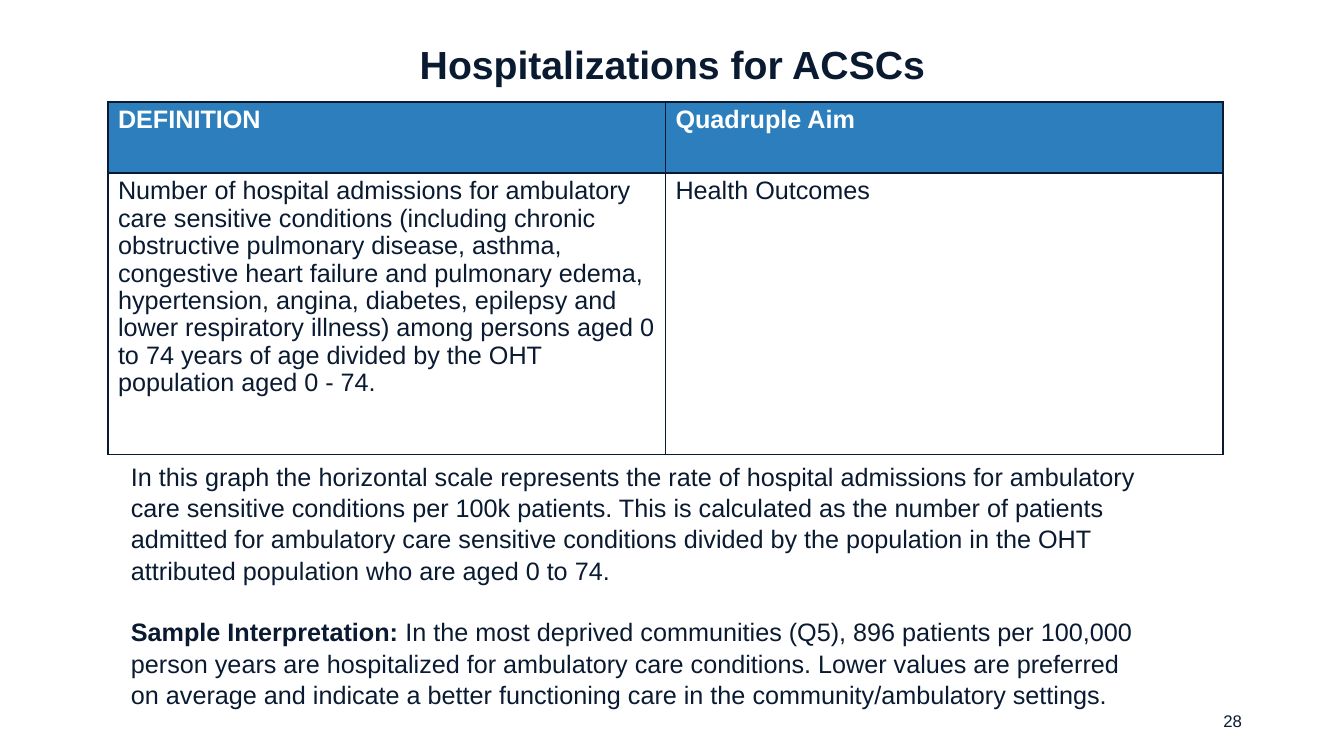
from lxml import etree
from pptx import Presentation
from pptx.dml.color import RGBColor
from pptx.enum.text import MSO_ANCHOR as Anchor, PP_ALIGN as Align
from pptx.oxml.ns import qn
from pptx.util import Cm, Pt

NAVY = RGBColor(0x0A, 0x1A, 0x31)
BLUE = RGBColor(0x2C, 0x7F, 0xBC)
WHITE = RGBColor(0xFF, 0xFF, 0xFF)


def write_run(paragraph, text, size=18, color=NAVY, bold=False,
              align=Align.LEFT, line_spacing=None):
    paragraph.alignment = align
    if line_spacing:
        paragraph.line_spacing = line_spacing
    run = paragraph.add_run()
    run.text = text
    run.font.name = "Arial"
    run.font.size = Pt(size)
    run.font.bold = bold
    run.font.color.rgb = color


def add_text_frame(slide, left, top, width, height, anchor=Anchor.TOP):
    shape = slide.shapes.add_textbox(Cm(left), Cm(top), Cm(width), Cm(height))
    frame = shape.text_frame
    frame.word_wrap = True
    frame.vertical_anchor = anchor
    return frame


presentation = Presentation()
presentation.slide_width = Cm(33.87)
presentation.slide_height = Cm(19.05)
slide = presentation.slides.add_slide(presentation.slide_layouts[6])

# Page number and title
page_number = add_text_frame(slide, 23.93, 17.65, 7.62, 1.02, Anchor.MIDDLE)
write_run(page_number.paragraphs[0], "28", size=12, align=Align.RIGHT)
title = add_text_frame(slide, 1.96, 0.61, 29.97, 2.13, Anchor.MIDDLE)
write_run(title.paragraphs[0], "Hospitalizations for ACSCs", size=28,
          bold=True, align=Align.CENTER, line_spacing=0.9)

# Definition table
rows = [
    ("DEFINITION", "Quadruple Aim"),
    ("Number of hospital admissions for ambulatory care sensitive conditions "
     "(including chronic obstructive pulmonary disease, asthma, congestive "
     "heart failure and pulmonary edema, hypertension, angina, diabetes, "
     "epilepsy and lower respiratory illness) among persons aged 0 to 74 "
     "years of age divided by the OHT population aged 0 - 74.",
     "Health Outcomes"),
]
table = slide.shapes.add_table(2, 2, Cm(2.72), Cm(2.57), Cm(28.1), Cm(8.89)).table
for column in table.columns:
    column.width = Cm(14.05)
for row, height in zip(table.rows, (1.79, 7.1)):
    row.height = Cm(height)

for row_index, texts in enumerate(rows):
    is_header = row_index == 0
    for column_index, text in enumerate(texts):
        cell = table.cell(row_index, column_index)
        cell.fill.solid()
        cell.fill.fore_color.rgb = BLUE if is_header else WHITE
        write_run(cell.text_frame.paragraphs[0], text, bold=is_header,
                  color=WHITE if is_header else NAVY, line_spacing=0.97)
        # Cell borders come before the fill
        properties = cell._tc.get_or_add_tcPr()
        for position, side in enumerate(("lnL", "lnR", "lnT", "lnB")):
            border = etree.Element(qn(f"a:{side}"), w=str(Pt(1)))
            border_fill = etree.SubElement(border, qn("a:solidFill"))
            etree.SubElement(border_fill, qn("a:srgbClr"), val=str(NAVY))
            properties.insert(position, border)

# Explanation and sample interpretation
explanation = add_text_frame(slide, 3.05, 11.46, 26.21, 6.4)
write_run(
    explanation.paragraphs[0],
    "In this graph the horizontal scale represents the rate of hospital "
    "admissions for ambulatory care sensitive conditions per 100k patients. "
    "This is calculated as the number of patients admitted for ambulatory "
    "care sensitive conditions divided by the population in the OHT "
    "attributed population who are aged 0 to 74.", line_spacing=1.04)
interpretation = explanation.add_paragraph()
interpretation.space_before = Pt(21.5)
write_run(interpretation, "Sample Interpretation: ", bold=True, line_spacing=1.04)
write_run(
    interpretation,
    "In the most deprived communities (Q5), 896 patients per 100,000 person "
    "years are hospitalized for ambulatory care conditions. Lower values are "
    "preferred on average and indicate a better functioning care in the "
    "community/ambulatory settings.", line_spacing=1.04)

presentation.save("out.pptx")
